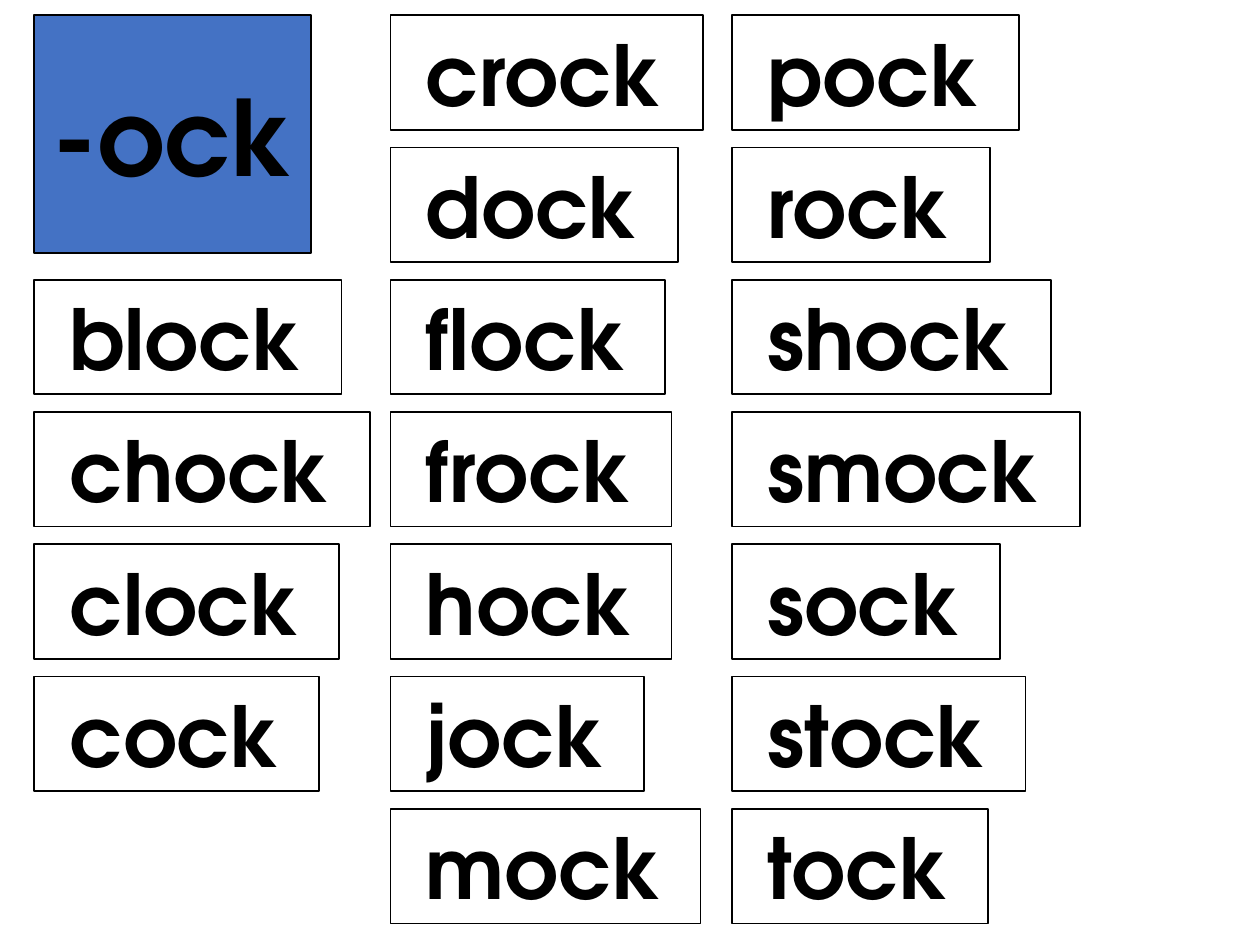
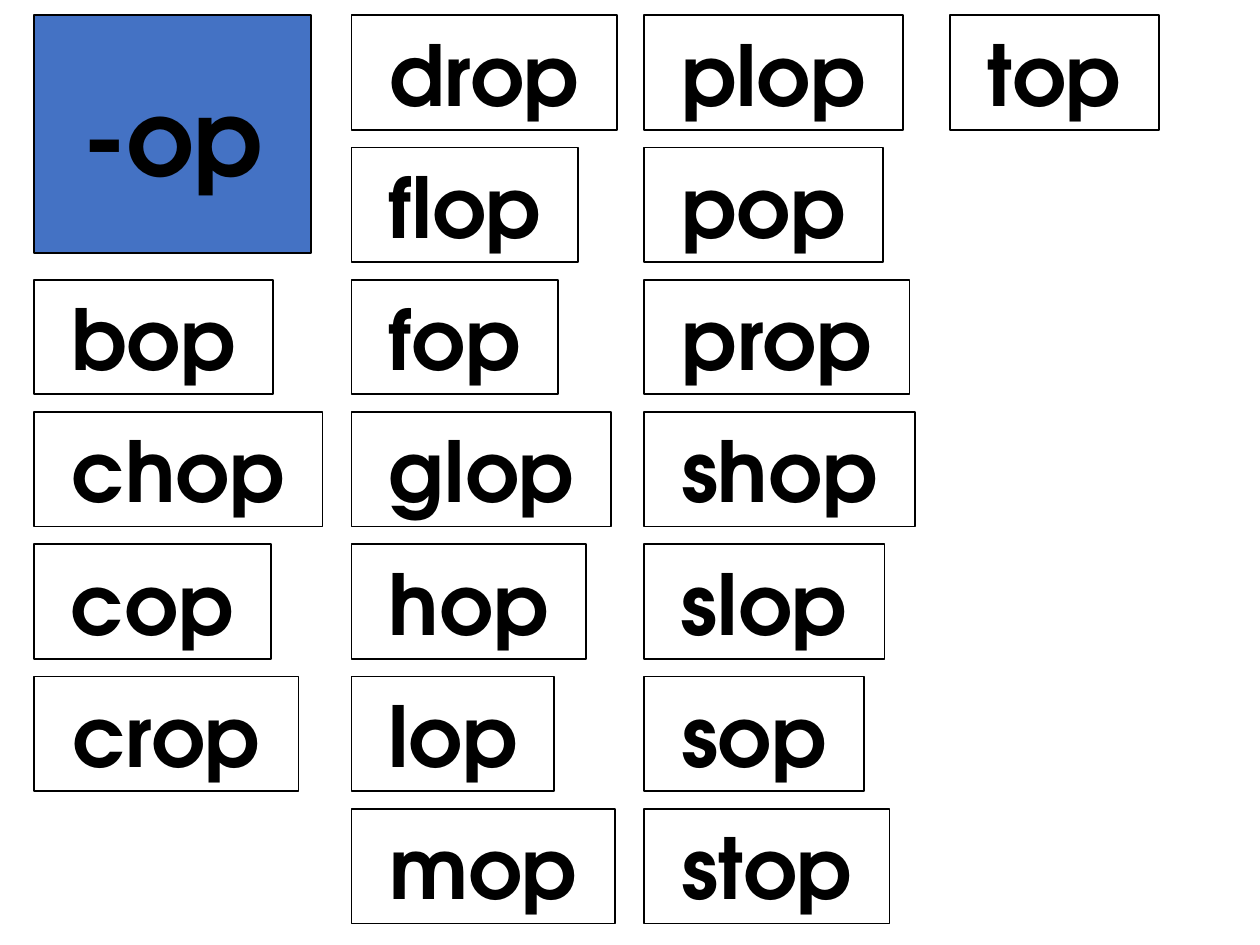
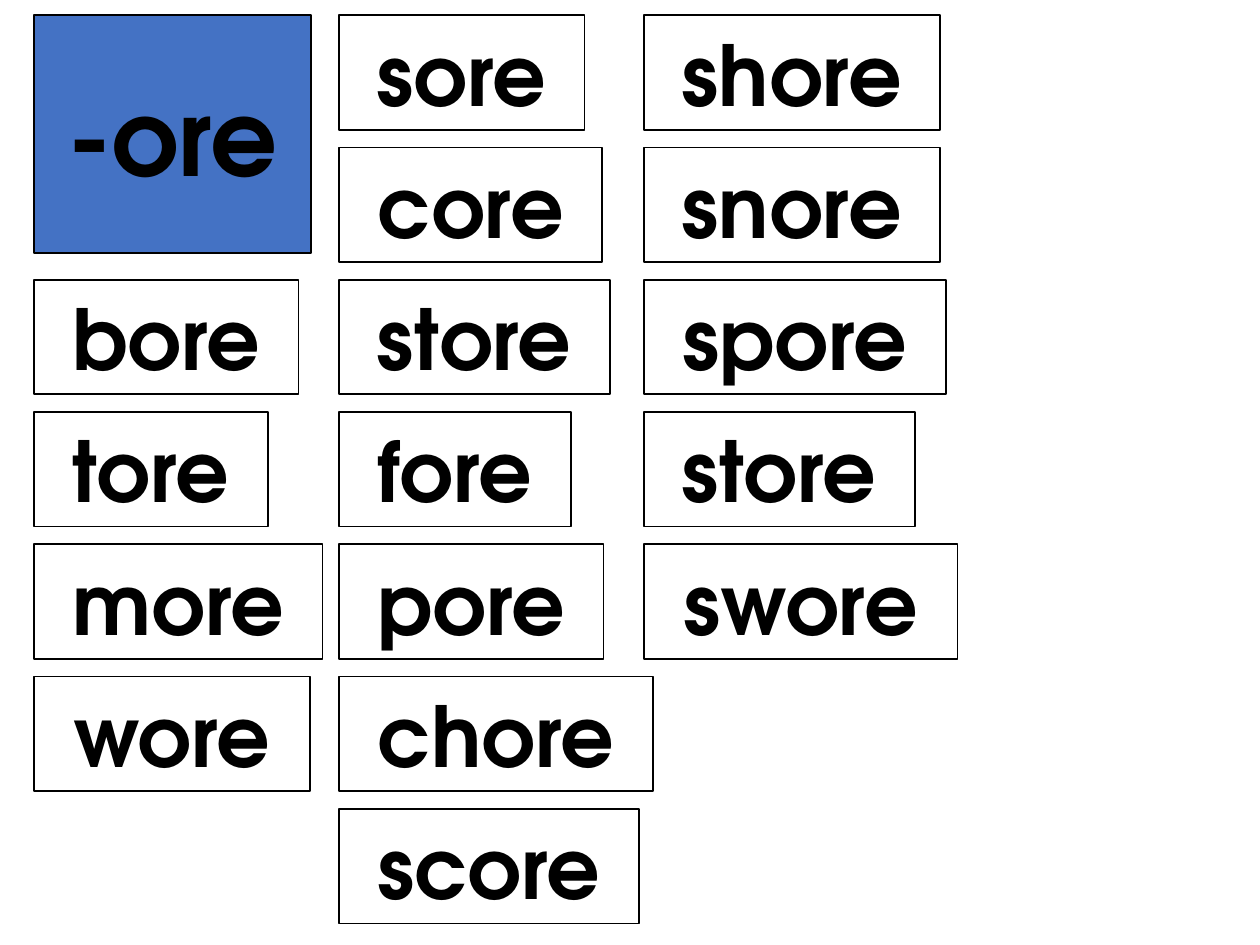
from pptx import Presentation
from pptx import util as u
from pptx.dml.color import RGBColor
from pptx.enum import shapes, text

COLOURS = {"family": "4472C4", "card": "FFFFFF", "ink": "000000"}
FONT = "TeX Gyre Adventor"

# Shared grid, in inches
LEFT, TOP = 0.27, 0.12
ROW_PITCH, CARD_HEIGHT = 1.05, 0.91
FAMILY_WIDTH, FAMILY_HEIGHT = 2.2, 1.89
CARD_INSET = 0.28

# Each family: ending, word alignment, columns of (left, first row, {word: card width})
FAMILIES = [
    ("-ock", text.PP_ALIGN.LEFT, [
        (LEFT, 2, {"block": 2.44, "chock": 2.67, "clock": 2.42, "cock": 2.26}),
        (3.1, 0, {"crock": 2.48, "dock": 2.28, "flock": 2.18, "frock": 2.23,
                  "hock": 2.23, "jock": 2.01, "mock": 2.46}),
        (5.81, 0, {"pock": 2.28, "rock": 2.05, "shock": 2.53, "smock": 2.76,
                   "sock": 2.13, "stock": 2.33, "tock": 2.03}),
    ]),
    ("-op", text.PP_ALIGN.CENTER, [
        (LEFT, 2, {"bop": 1.9, "chop": 2.29, "cop": 1.88, "crop": 2.1}),
        (2.79, 0, {"drop": 2.11, "flop": 1.8, "fop": 1.64, "glop": 2.06,
                   "hop": 1.86, "lop": 1.61, "mop": 2.09}),
        (5.11, 0, {"plop": 2.06, "pop": 1.9, "prop": 2.11, "shop": 2.15,
                   "slop": 1.91, "sop": 1.75, "stop": 1.95}),
        (7.54, 0, {"top": 1.66}),
    ]),
    ("-ore", text.PP_ALIGN.CENTER, [
        (LEFT, 2, {"bore": 2.1, "tore": 1.86, "more": 2.29, "wore": 2.19}),
        (2.69, 0, {"sore": 1.95, "core": 2.09, "store": 2.15, "fore": 1.84,
                   "pore": 2.1, "chore": 2.49, "score": 2.38}),
        (5.11, 0, {"shore": 2.35, "snore": 2.35, "spore": 2.4, "store": 2.15,
                   "swore": 2.49}),
    ]),
]


def format_box(box, word, fill, size, align, inset):
    """Give a box its fill, outline and single bold word."""
    box.fill.solid()
    box.fill.fore_color.rgb = RGBColor.from_string(COLOURS[fill])
    box.line.color.rgb = RGBColor.from_string(COLOURS["ink"])
    box.line.width = u.Pt(1)
    frame = box.text_frame
    frame.auto_size = text.MSO_AUTO_SIZE.NONE
    frame.word_wrap = False
    frame.vertical_anchor = text.MSO_ANCHOR.MIDDLE
    frame.margin_left = frame.margin_right = u.Inches(inset)
    para = frame.paragraphs[0]
    para.alignment = align
    span = para.add_run()
    span.text = word
    span.font.name = FONT
    span.font.size = u.Pt(size)
    span.font.bold = True
    span.font.color.rgb = RGBColor.from_string(COLOURS["ink"])


def add_family_title(page, ending):
    box = page.shapes.title
    box.left, box.top = u.Inches(LEFT), u.Inches(TOP)
    box.width, box.height = u.Inches(FAMILY_WIDTH), u.Inches(FAMILY_HEIGHT)
    format_box(box, ending, "family", 60, text.PP_ALIGN.CENTER, 0.1)


def add_word_column(page, left, first_row, words, align):
    for row, (word, width) in enumerate(words.items(), first_row):
        card = page.shapes.add_shape(
            shapes.MSO_SHAPE.RECTANGLE, u.Inches(left),
            u.Inches(TOP + row * ROW_PITCH), u.Inches(width), u.Inches(CARD_HEIGHT))
        card.shadow.inherit = False
        format_box(card, word, "card", 48, align, CARD_INSET)


def main():
    deck = Presentation()
    deck.slide_width, deck.slide_height = u.Inches(10), u.Inches(7.5)
    title_only = deck.slide_layouts[5]
    for ending, align, columns in FAMILIES:
        page = deck.slides.add_slide(title_only)
        add_family_title(page, ending)
        for left, first_row, words in columns:
            add_word_column(page, left, first_row, words, align)
    deck.save("out.pptx")


if __name__ == "__main__":
    main()
